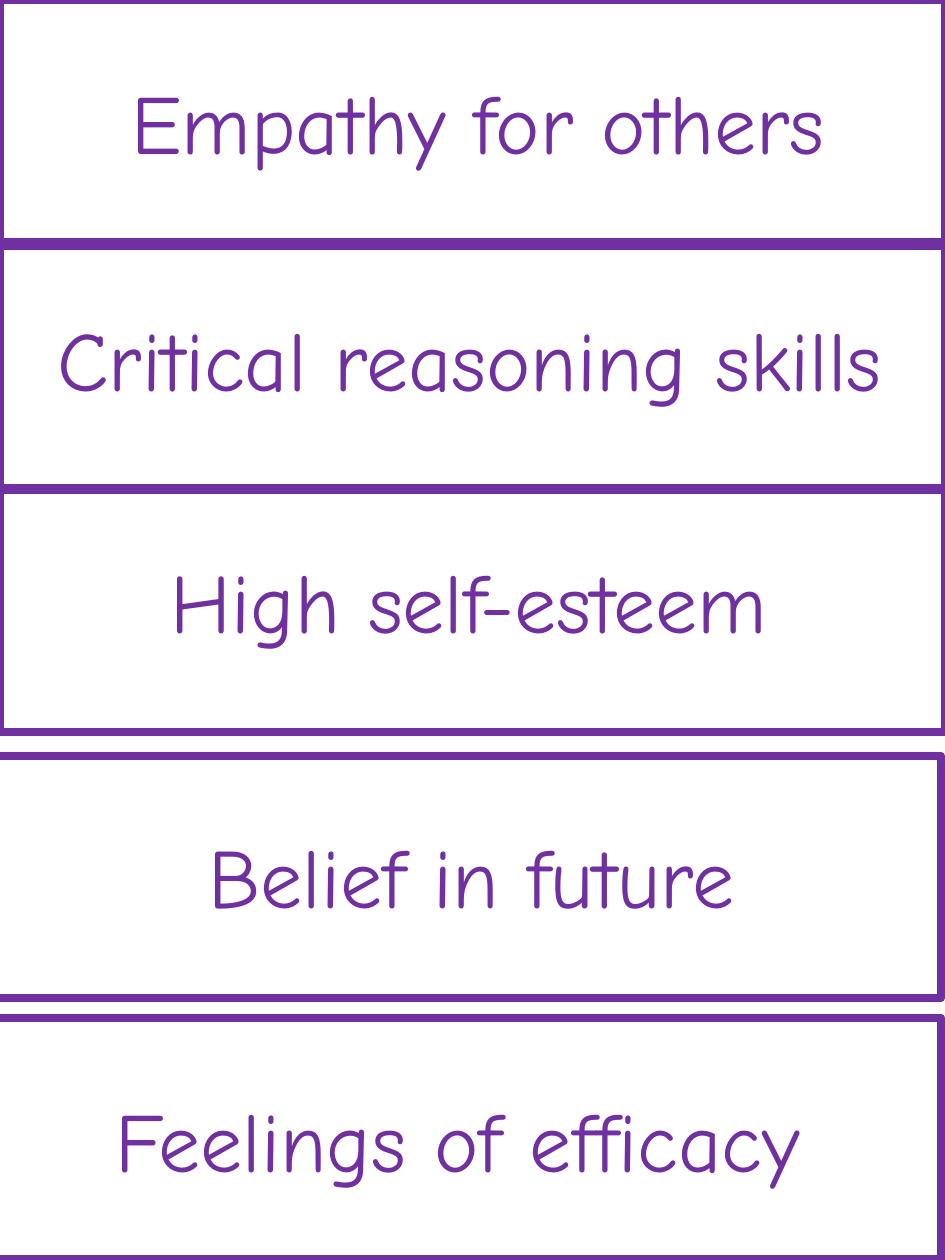
import pptx
import pptx.dml.color
import pptx.enum.shapes
import pptx.enum.text
import pptx.util

PX = 914400 // 126
WIDTH, HEIGHT = 945, 1260
CARD = 242
LABEL = 115
PURPLE = "7030A0"
FONT = "Comic Neue"

CARDS = [
    (0, 0, "Empathy for others", 11, 64, 934),
    (0, 246, "Critical reasoning skills", -1, 301, 941),
    (0, 490, "High self-esteem", -4, 543, 946),
    (-4, 756, "Belief in future", 1, 818, 941),
    (-4, 1018, "Feelings of efficacy", 5, 1082, 905),
]


def px(*sizes):
    return [pptx.util.Emu(size * PX) for size in sizes]


def color(code):
    return pptx.dml.color.RGBColor.from_string(code)


def add_frame(slide, left, top):
    kind = pptx.enum.shapes.MSO_SHAPE.RECTANGLE
    frame = slide.shapes.add_shape(kind, *px(left, top, WIDTH, CARD))
    frame.shadow.inherit = False
    frame.fill.background()
    frame.line.color.rgb = color(PURPLE)
    frame.line.width = pptx.util.Pt(5)


def add_label(slide, text, left, top, width):
    label = slide.shapes.add_textbox(*px(left, top, width, LABEL))
    body = label.text_frame
    body.word_wrap = True
    body.auto_size = pptx.enum.text.MSO_AUTO_SIZE.SHAPE_TO_FIT_TEXT
    line = body.paragraphs[0]
    line.text = text
    line.alignment = pptx.enum.text.PP_ALIGN.CENTER
    line.font.name = FONT
    line.font.size = pptx.util.Pt(48)
    line.font.color.rgb = color(PURPLE)


def main():
    deck = pptx.Presentation()
    deck.slide_width, deck.slide_height = px(WIDTH, HEIGHT)
    slide = deck.slides.add_slide(deck.slide_layouts[6])
    for left, top, *_ in CARDS:
        add_frame(slide, left, top)
    for _, _, *label in CARDS:
        add_label(slide, *label)
    deck.save("out.pptx")


if __name__ == "__main__":
    main()
